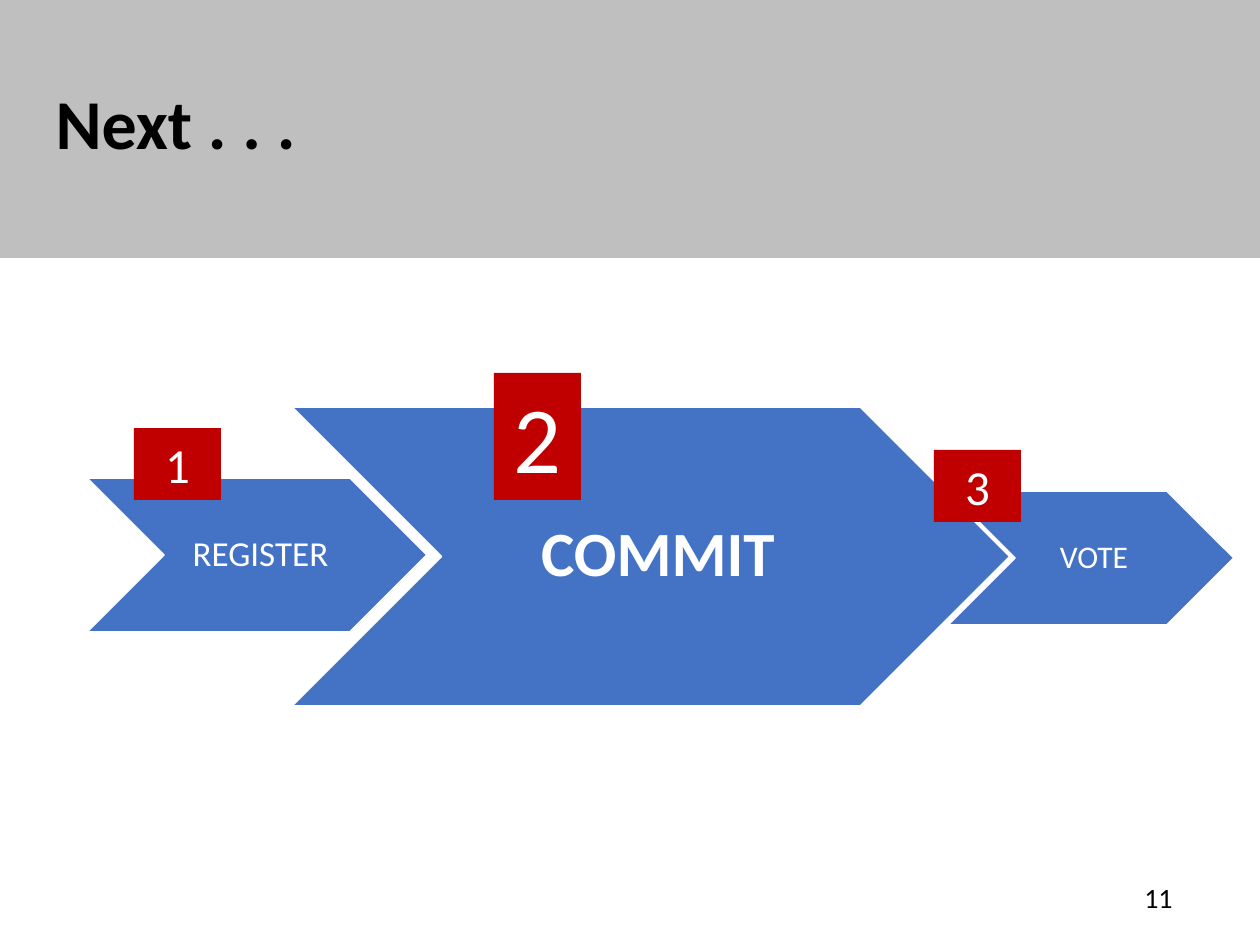
from dataclasses import dataclass
from typing import Any

from pptx import Presentation
from pptx.dml.color import RGBColor
from pptx.enum.shapes import MSO_SHAPE as Kind
from pptx.enum.text import MSO_ANCHOR as Anchor, MSO_AUTO_SIZE as Fit, PP_ALIGN as Align
from pptx.util import Emu, Pt

SCALE = 914400 / 126
BLACK = RGBColor(0x00, 0x00, 0x00)
WHITE = RGBColor(0xFF, 0xFF, 0xFF)
GREY = RGBColor(0xBF, 0xBF, 0xBF)
BLUE = RGBColor(0x44, 0x72, 0xC4)
RED = RGBColor(0xC0, 0x00, 0x00)


@dataclass(frozen=True)
class Box:
    """A place on the slide in px."""

    left: int
    top: int
    width: int
    height: int


@dataclass(frozen=True)
class Step:
    """A chevron with its numbered badge."""

    label: str
    size: int
    bold: bool
    inset: int
    pad: int
    arrow: Box
    mark: str
    big: int
    badge: Box


STEPS = (
    Step("REGISTER", 20, False, 11, 4, Box(87, 478, 340, 154),
         "1", 28, Box(134, 428, 87, 72)),
    Step("COMMIT", 36, True, 20, 6, Box(292, 407, 718, 299),
         "2", 54, Box(494, 373, 87, 127)),
    Step("VOTE", 18, False, 10, 4, Box(948, 491, 286, 134),
         "3", 28, Box(934, 450, 87, 72)),
)


def px(size: int) -> Emu:
    """Turn px into EMU."""
    return Emu(round(size * SCALE))


def edges(box: Box) -> list[Emu]:
    """Give the four lengths of a box in EMU."""
    return [px(n) for n in (box.left, box.top, box.width, box.height)]


def style(item: Any, looks: dict[str, Any]) -> None:
    """Set each attribute from a dict of format values."""
    for name, value in looks.items():
        setattr(item, name, value)


def draw(slide: Any, kind: Kind, box: Box, fill: RGBColor) -> Any:
    """Add a flat filled shape without an outline."""
    shape = slide.shapes.add_shape(kind, *edges(box))
    shape.shadow.inherit = False
    shape.fill.solid()
    shape.fill.fore_color.rgb = fill
    shape.line.fill.background()
    return shape


def write(shape: Any, text: str, size: int, color: RGBColor, bold: bool = False,
          frame: dict[str, Any] | None = None, para: dict[str, Any] | None = None) -> None:
    """Put one formatted paragraph into a shape."""
    body = shape.text_frame
    body.text = text
    style(body, {"word_wrap": True, **(frame or {})})
    line = body.paragraphs[0]
    style(line, para or {})
    font = line.runs[0].font
    style(font, {"name": "Calibri", "size": Pt(size), "bold": bold})
    font.color.rgb = color


def head(slide: Any) -> None:
    """Draw the grey band and the title over it."""
    band = draw(slide, Kind.RECTANGLE, Box(0, 0, 1260, 258), GREY)
    title = slide.shapes.title
    title._element.addprevious(band._element)
    title.left, title.top, title.width, title.height = edges(Box(43, 35, 1217, 183))
    write(title, "Next . . .", 40, BLACK, True,
          {"vertical_anchor": Anchor.MIDDLE, "auto_size": Fit.NONE},
          {"alignment": Align.LEFT, "line_spacing": 0.9})


def arrow(slide: Any, step: Step) -> None:
    """Draw the labelled chevron of a step."""
    shape = draw(slide, Kind.CHEVRON, step.arrow, BLUE)
    shape.line.color.rgb = WHITE
    shape.line.width = Pt(1)
    pad = px(step.pad)
    write(shape, step.label, step.size, WHITE, step.bold,
          {"vertical_anchor": Anchor.MIDDLE, "margin_left": px(step.inset),
           "margin_top": pad, "margin_right": pad, "margin_bottom": pad},
          {"alignment": Align.CENTER, "line_spacing": 0.9})


def badge(slide: Any, step: Step) -> None:
    """Draw the numbered badge of a step."""
    shape = draw(slide, Kind.RECTANGLE, step.badge, RED)
    write(shape, step.mark, step.big, WHITE, False,
          {"vertical_anchor": Anchor.TOP, "auto_size": Fit.SHAPE_TO_FIT_TEXT},
          {"alignment": Align.CENTER})


def main() -> None:
    """Build the slide and save it."""
    deck = Presentation()
    style(deck, {"slide_width": px(1260), "slide_height": px(945)})
    slide = deck.slides.add_slide(deck.slide_layouts[5])
    head(slide)
    for part in (arrow, badge):
        for step in STEPS:
            part(slide, step)
    page = slide.shapes.add_textbox(*edges(Box(992, 874, 193, 46)))
    write(page, "11", 16, BLACK, False,
          {"auto_size": Fit.SHAPE_TO_FIT_TEXT}, {"alignment": Align.RIGHT})
    deck.save("out.pptx")


if __name__ == "__main__":
    main()
